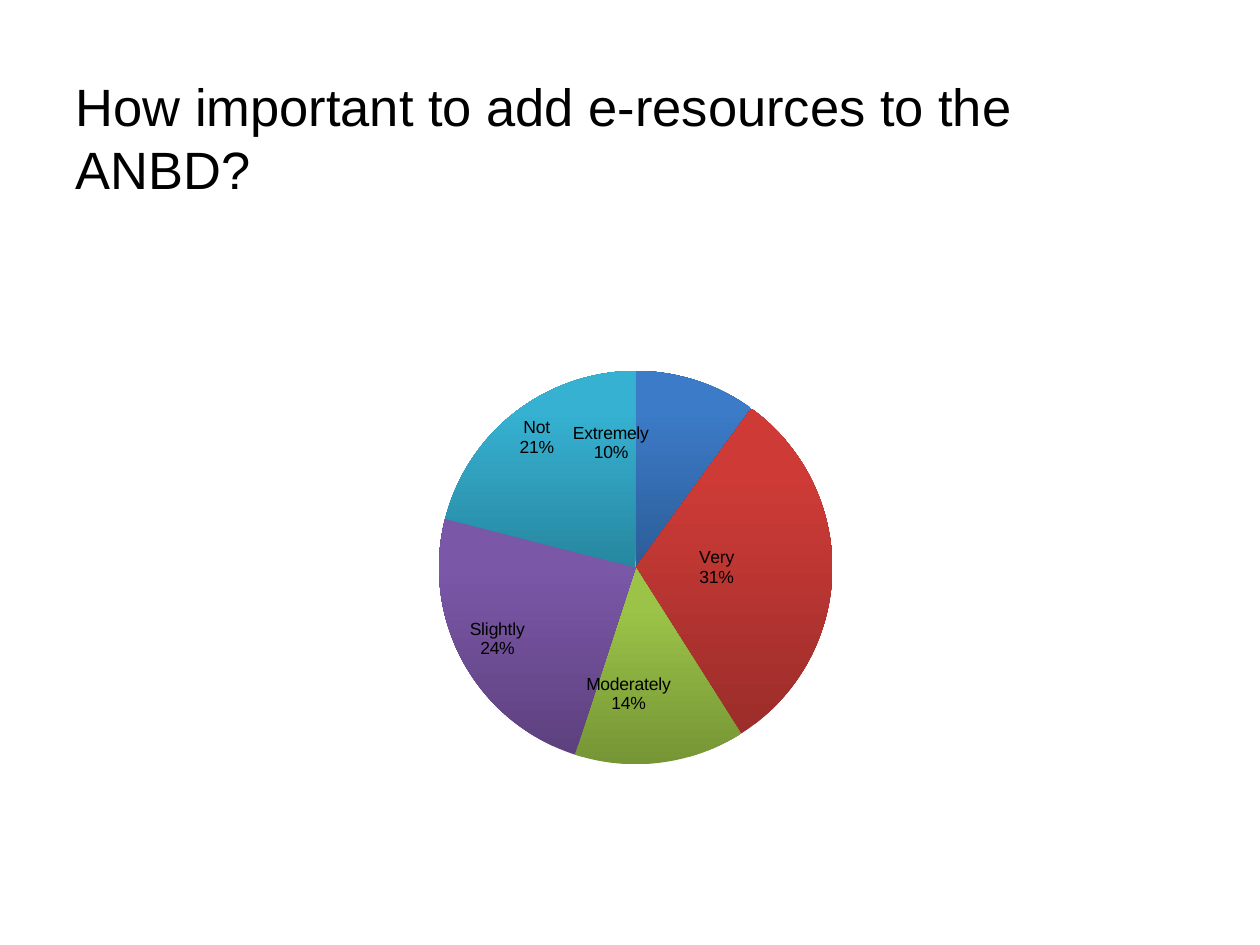
from lxml.etree import SubElement
from pptx import Presentation
from pptx.chart.data import CategoryChartData
from pptx.dml.color import RGBColor
from pptx.enum.chart import XL_CHART_TYPE as ChartType, XL_LABEL_POSITION as LabelPos
from pptx.enum.text import MSO_ANCHOR as Anchor, MSO_AUTO_SIZE as AutoSize, PP_ALIGN as Align
from pptx.oxml import parse_xml
from pptx.oxml.ns import nsdecls, qn
from pptx.util import Inches, Pt

FONT = "Arial"
COLORS = {
    "text": "000000",
    "Extremely": ("2C5D98", "3C7BC7"),
    "Very": ("9B2D2A", "CE3B37"),
    "Moderately": ("769535", "9BC348"),
    "Slightly": ("5D417E", "7B57A8"),
    "Not": ("2787A0", "36B1D2"),
}
ANSWERS = {"Extremely": 10, "Very": 31, "Moderately": 14, "Slightly": 24, "Not": 21}
LABEL_SHIFTS = {"Extremely": (-0.04, 0.06), "Very": (-0.08, -0.01), "Moderately": (0.01, -0.07)}
PIE_AREA = {"x": 0.28, "y": 0.28, "w": 0.45, "h": 0.66}


def rgb(value):
    return RGBColor.from_string(value)


def write_text(frame, text, size, color, align=Align.LEFT, line_spacing=None):
    paragraph = frame.paragraphs[0]
    paragraph.text = text
    paragraph.alignment = align
    paragraph.line_spacing = line_spacing
    font = paragraph.runs[0].font
    font.name, font.size, font.color.rgb = FONT, Pt(size), rgb(color)


def place_title(title, left, top, width, height):
    title.left, title.top, title.width, title.height = left, top, width, height
    frame = title.text_frame
    frame.word_wrap = True
    frame.auto_size = AutoSize.NONE
    frame.vertical_anchor = Anchor.TOP
    frame.margin_top = Inches(0.07)
    write_text(frame, "How important to add e-resources to the ANBD?",
               size=30, color=COLORS["text"], line_spacing=Pt(36))


def set_pie_area(chart):
    plot_area = chart.plots[0]._element.getparent()
    for old in plot_area.findall(qn("c:layout")):
        plot_area.remove(old)
    layout = parse_xml(f"<c:layout {nsdecls('c')}><c:manualLayout/></c:layout>")
    settings = {"layoutTarget": "inner", "xMode": "edge", "yMode": "edge", **PIE_AREA}
    for tag, value in settings.items():
        SubElement(layout[0], qn(f"c:{tag}")).set("val", str(value))
    plot_area.insert(0, layout)


def shifted_label(index, x, y):
    return parse_xml(
        f'<c:dLbl {nsdecls("c")}><c:idx val="{index}"/>'
        f'<c:layout><c:manualLayout><c:x val="{x}"/><c:y val="{y}"/></c:manualLayout></c:layout>'
        '<c:dLblPos val="inEnd"/><c:showLegendKey val="0"/><c:showVal val="0"/>'
        '<c:showCatName val="1"/><c:showSerName val="0"/><c:showPercent val="1"/>'
        '<c:showBubbleSize val="0"/><c:separator>\n</c:separator></c:dLbl>')


def label_slices(series):
    labels = series.data_labels
    labels.show_value = False
    labels.show_category_name = True
    labels.show_percentage = True
    labels.number_format = "0%"
    labels.number_format_is_linked = False
    labels.position = LabelPos.INSIDE_END
    labels.font.name, labels.font.size = FONT, Pt(10)
    labels.font.color.rgb = rgb(COLORS["text"])
    element = labels._element
    separator = parse_xml(f"<c:separator {nsdecls('c')}>\n</c:separator>")
    element.find(qn("c:showPercent")).addnext(separator)
    bubble_size = element.find(qn("c:showBubbleSize"))
    if bubble_size is not None:
        separator.addprevious(bubble_size)
    for index, answer in enumerate(LABEL_SHIFTS):
        element.insert(index, shifted_label(index, *LABEL_SHIFTS[answer]))


def add_answers_pie(slide, left, top, width, height):
    data = CategoryChartData()
    data.categories = list(ANSWERS)
    data.add_series("Series 1", list(ANSWERS.values()))
    chart = slide.shapes.add_chart(ChartType.PIE, left, top, width, height, data).chart
    chart.has_title = False
    chart.has_legend = False
    chart.font.name, chart.font.size = FONT, Pt(10)
    chart.font.color.rgb = rgb(COLORS["text"])
    set_pie_area(chart)
    chart.plots[0].vary_by_categories = True
    series = chart.plots[0].series[0]
    for index, answer in enumerate(ANSWERS):
        slice_format = series.points[index].format
        slice_format.line.fill.background()
        fill = slice_format.fill
        fill.gradient()
        fill.gradient_angle = 90
        for stop, position, color in zip(fill.gradient_stops, (0, 0.8), COLORS[answer]):
            stop.position = position
            stop.color.rgb = rgb(color)
    label_slices(series)


def main():
    deck = Presentation()
    deck.slide_width, deck.slide_height = Inches(10), Inches(7.5)
    slide = deck.slides.add_slide(deck.slide_layouts[5])
    place_title(slide.shapes.title, Inches(0.5), Inches(0.52), Inches(9), Inches(0.87))
    add_answers_pie(slide, Inches(0.5), Inches(1.62), Inches(9), Inches(4.73))
    deck.save("out.pptx")


if __name__ == "__main__":
    main()
